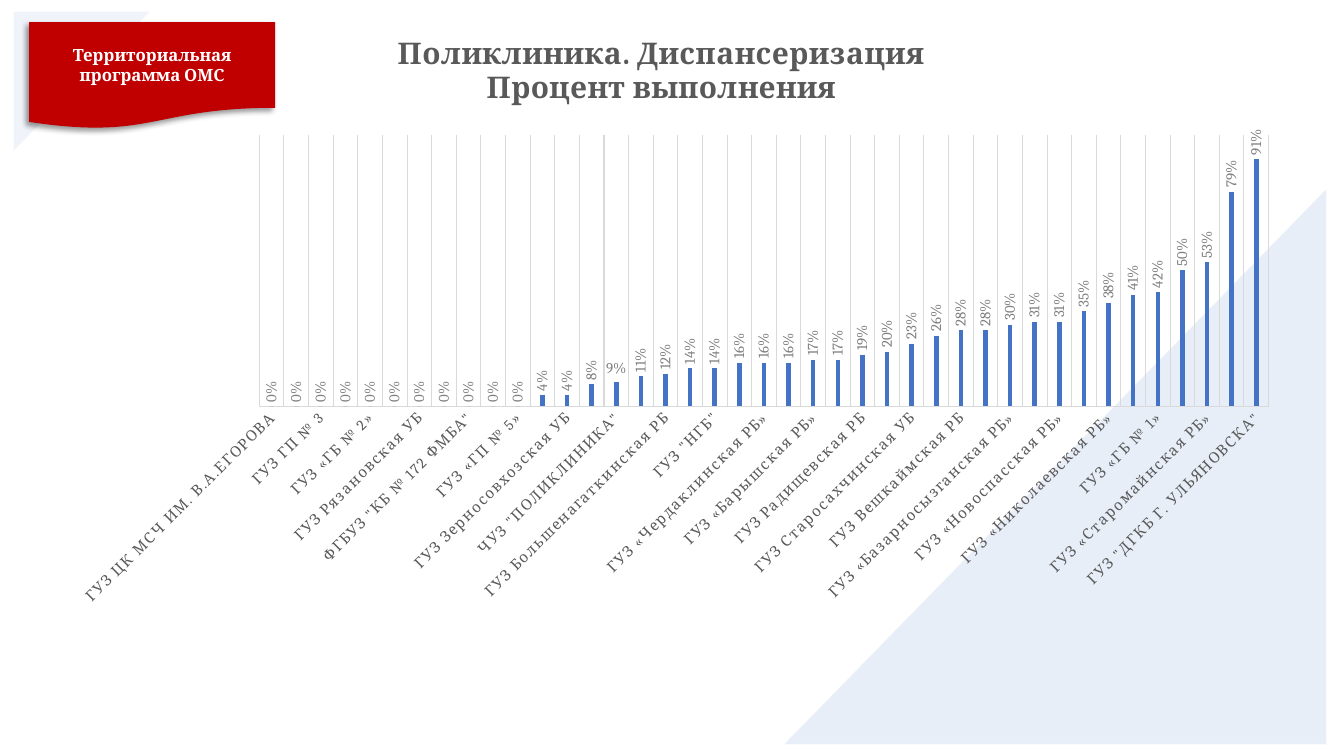
import lxml.etree
import pptx
import pptx.chart.data
import pptx.dml.color
import pptx.enum.chart
import pptx.enum.shapes
import pptx.enum.text
import pptx.oxml
import pptx.oxml.ns
import pptx.util

Inches = pptx.util.Inches
Pt = pptx.util.Pt
qn = pptx.oxml.ns.qn
Shapes = pptx.enum.shapes.MSO_SHAPE

TITLE_LINES = ["Поликлиника. Диспансеризация", "Процент выполнения"]
CLINICS = [
    ("ГУЗ ЦК МСЧ ИМ. В.А.ЕГОРОВА", 0), ("ГУЗ «ГП № 4»", 0),
    ("ГУЗ ГП № 3", 0), ("ГУЗ ГБ № 3", 0),
    ("ГУЗ «ГБ № 2»", 0), ("ГУЗ ГП № 1", 0),
    ("ГУЗ Рязановская УБ", 0), ("ГУЗ «Ульяновская РБ»", 0),
    ('ФГБУЗ "КБ № 172 ФМБА"', 0), ('ФГБУЗ "ФВЦМР ФМБА"', 0),
    ("ГУЗ «ГП № 5»", 0), ('ГУЗ "ГП №6"', 0.04),
    ("ГУЗ Зерносовхозская УБ", 0.04), ("ГУЗ «Сенгилеевская РБ»", 0.08),
    ('ЧУЗ "ПОЛИКЛИНИКА"', 0.09), ("ГУЗ «Инзенская РБ»", 0.11),
    ("ГУЗ Большенагаткинская РБ", 0.12), ("ГУЗ Мулловская УБ", 0.14),
    ('ГУЗ "НГБ"', 0.14), ("ГУЗ «Павловская РБ»", 0.16),
    ("ГУЗ «Чердаклинская РБ»", 0.16), ("ГУЗ «Кузоватовская РБ»", 0.16),
    ("ГУЗ «Барышская РБ»", 0.17), ("ГУЗ Ново-Майнская городская больница", 0.17),
    ("ГУЗ Радищевская РБ", 0.19), ("ГУЗ «Майнская РБ", 0.2),
    ("ГУЗ Старосахчинская УБ", 0.23), ("ГУЗ Сурская РБ", 0.26),
    ("ГУЗ Вешкаймская РБ", 0.28), ('ГУЗ "ЦГКБ"', 0.28),
    ("ГУЗ «Базарносызганская РБ»", 0.3), ("ГУЗ «Новомалыклинская РБ»", 0.31),
    ("ГУЗ «Новоспасская РБ»", 0.31), ("ГУЗ «Тереньгульская РБ»", 0.35),
    ("ГУЗ «Николаевская РБ»", 0.38), ("ГУЗ Тиинская УБ", 0.41),
    ("ГУЗ «ГБ № 1»", 0.42), ("ГУЗ Карсунская РБ", 0.5),
    ("ГУЗ «Старомайнская РБ»", 0.53), ("ГУЗ «Старокулаткинская РБ»", 0.79),
    ('ГУЗ "ДГКБ Г. УЛЬЯНОВСКА"', 0.91),
]
HORIZONTAL_LABEL = 14


def rgb(color):
    return pptx.dml.color.RGBColor.from_string(color)


def add_alpha(color_parent, percent):
    """Set the opacity of every solid colour below an element."""
    for color in color_parent.iter(qn("a:srgbClr")):
        lxml.etree.SubElement(color, qn("a:alpha")).set("val", str(percent * 1000))


def rotate_text(element, degrees):
    for body in element.iter(qn("a:bodyPr")):
        body.set("rot", str(degrees * 60000))
        body.set("vert", "horz")


def space_letters(element, points):
    for tag in ("a:defRPr", "a:rPr"):
        for properties in element.iter(qn(tag)):
            properties.set("spc", str(round(points * 100)))


def place_in_chart(element, index, target=None, **fractions):
    """Give a chart part a manual layout in fractions of the chart."""
    for layout in element.findall(qn("c:layout")):
        element.remove(layout)
    layout = pptx.oxml.parse_xml(f"<c:layout {pptx.oxml.ns.nsdecls('c')}/>")
    manual = lxml.etree.SubElement(layout, qn("c:manualLayout"))
    settings = {"layoutTarget": target} if target else {}
    settings |= {"xMode": "edge", "yMode": "edge", **fractions}
    for name, value in settings.items():
        lxml.etree.SubElement(manual, qn(f"c:{name}")).set("val", str(value))
    element.insert(index, layout)


class ClinicSlide:
    font_name = "Cambria"
    bar_color = "4472C4"
    grid_color = "D9D9D9"
    text_color = "595959"
    label_color = "808080"
    label_size = 10.6

    def __init__(self, presentation):
        self.slide = presentation.slides.add_slide(presentation.slide_layouts[6])

    def style_font(self, font, size, color, bold=False):
        font.name = self.font_name
        font.size = Pt(size)
        font.bold = bold
        font.color.rgb = rgb(color)

    def add_run(self, paragraph, text, size, color, bold=False):
        run = paragraph.add_run()
        run.text = text
        self.style_font(run.font, size, color, bold)

    def add_shape(self, kind, left, top, width, height, fill):
        shape = self.slide.shapes.add_shape(
            kind, Inches(left), Inches(top), Inches(width), Inches(height))
        shape.shadow.inherit = False
        shape.fill.solid()
        shape.fill.fore_color.rgb = rgb(fill)
        shape.line.fill.background()
        return shape

    def add_corner(self, left, top, width, height, rotation, fill, outline=None):
        shape = self.add_shape(Shapes.RIGHT_TRIANGLE, left, top, width, height, fill)
        shape.rotation = rotation
        if outline:
            shape.line.color.rgb = rgb(outline)
            shape.line.width = Pt(1)
        add_alpha(shape.element.spPr, 20)

    def add_ribbon(self, text, left, top, width, height):
        shape = self.add_shape(
            Shapes.FLOWCHART_DOCUMENT, left, top, width, height, "C00000")
        effects = shape.element.spPr.find(qn("a:effectLst"))
        shadow = lxml.etree.SubElement(
            effects, qn("a:outerShdw"), blurRad=str(Pt(4)), dist=str(Pt(3)),
            dir=str(135 * 60000), algn="tr", rotWithShape="0")
        lxml.etree.SubElement(shadow, qn("a:srgbClr"), val="000000")
        add_alpha(shadow, 40)
        frame = shape.text_frame
        frame.word_wrap = True
        frame.vertical_anchor = pptx.enum.text.MSO_ANCHOR.MIDDLE
        frame.margin_left = frame.margin_right = Inches(0.07)
        frame.margin_top = frame.margin_bottom = Inches(0.03)
        paragraph = frame.paragraphs[0]
        paragraph.alignment = pptx.enum.text.PP_ALIGN.CENTER
        self.add_run(paragraph, text, 12, "FFFFFF", bold=True)

    def add_chart(self, left, top, width, height):
        data = pptx.chart.data.CategoryChartData(number_format="0%")
        data.categories = [name for name, _ in CLINICS]
        data.add_series("Процент выполнения", [share for _, share in CLINICS])
        chart = self.slide.shapes.add_chart(
            pptx.enum.chart.XL_CHART_TYPE.COLUMN_CLUSTERED, Inches(left),
            Inches(top), Inches(width), Inches(height), data).chart
        self.style_font(chart.font, 10, "000000")
        chart.has_legend = False
        self.add_chart_title(chart)
        self.style_axes(chart)
        self.style_bars(chart)
        place_in_chart(chart.element.xpath(".//c:plotArea")[0], 0, "inner",
                       x=0.159, y=0.168, w=0.828, h=0.369)

    def add_chart_title(self, chart):
        frame = chart.chart_title.text_frame
        for index, line in enumerate(TITLE_LINES):
            paragraph = frame.add_paragraph() if index else frame.paragraphs[0]
            paragraph.alignment = pptx.enum.text.PP_ALIGN.CENTER
            self.add_run(paragraph, line, 21.3, self.text_color, bold=True)
        title = chart.element.xpath(".//c:title")[0]
        space_letters(title, 0.5)
        place_in_chart(title, 1, x=0.27, y=0.03)

    def style_axes(self, chart):
        names = chart.category_axis
        no_tick = pptx.enum.chart.XL_TICK_MARK.NONE
        names.major_tick_mark = names.minor_tick_mark = no_tick
        names.has_major_gridlines = True
        for line in (names.format.line, names.major_gridlines.format.line):
            line.color.rgb = rgb(self.grid_color)
            line.width = Pt(0.75)
        self.style_font(names.tick_labels.font, self.label_size, self.text_color)
        axis = chart.element.xpath(".//c:catAx")[0]
        rotate_text(axis, -45)
        space_letters(axis, 1.2)

        shares = chart.value_axis
        shares.minimum_scale, shares.maximum_scale, shares.major_unit = 0, 1, 1
        shares.has_major_gridlines = False
        shares.tick_labels.number_format = "0%"
        shares.tick_labels.number_format_is_linked = False
        shares.visible = False

    def style_bars(self, chart):
        plot = chart.plots[0]
        plot.gap_width = 444
        plot.overlap = -90
        plot.vary_by_categories = False
        series = plot.series[0]
        series.invert_if_negative = False
        series.format.fill.solid()
        series.format.fill.fore_color.rgb = rgb(self.bar_color)
        outside = pptx.enum.chart.XL_LABEL_POSITION.OUTSIDE_END
        labels = series.data_labels
        labels.show_value = True
        labels.position = outside
        labels.number_format = "0%"
        labels.number_format_is_linked = False
        self.style_font(labels.font, self.label_size, self.label_color)
        rotate_text(chart.element.xpath(".//c:ser/c:dLbls")[0], -90)
        label = series.points[HORIZONTAL_LABEL].data_label
        self.add_run(label.text_frame.paragraphs[0],
                     f"{CLINICS[HORIZONTAL_LABEL][1]:.0%}",
                     self.label_size, self.label_color)
        label.position = outside


def main():
    presentation = pptx.Presentation()
    presentation.slide_width = Inches(13.33)
    presentation.slide_height = Inches(7.5)
    slide = ClinicSlide(presentation)
    slide.add_corner(7.71, 1.94, 5.51, 5.38, 270, "8FAADC", outline="FFFFFF")
    slide.add_corner(0.12, 0.13, 1.38, 1.35, 90, "B4C7E7")
    slide.add_chart(0.65, 0.11, 12.09, 7.3)
    slide.add_ribbon("Территориальная программа ОМС", 0.29, 0.22, 2.44, 1.06)
    presentation.save("out.pptx")


if __name__ == "__main__":
    main()
